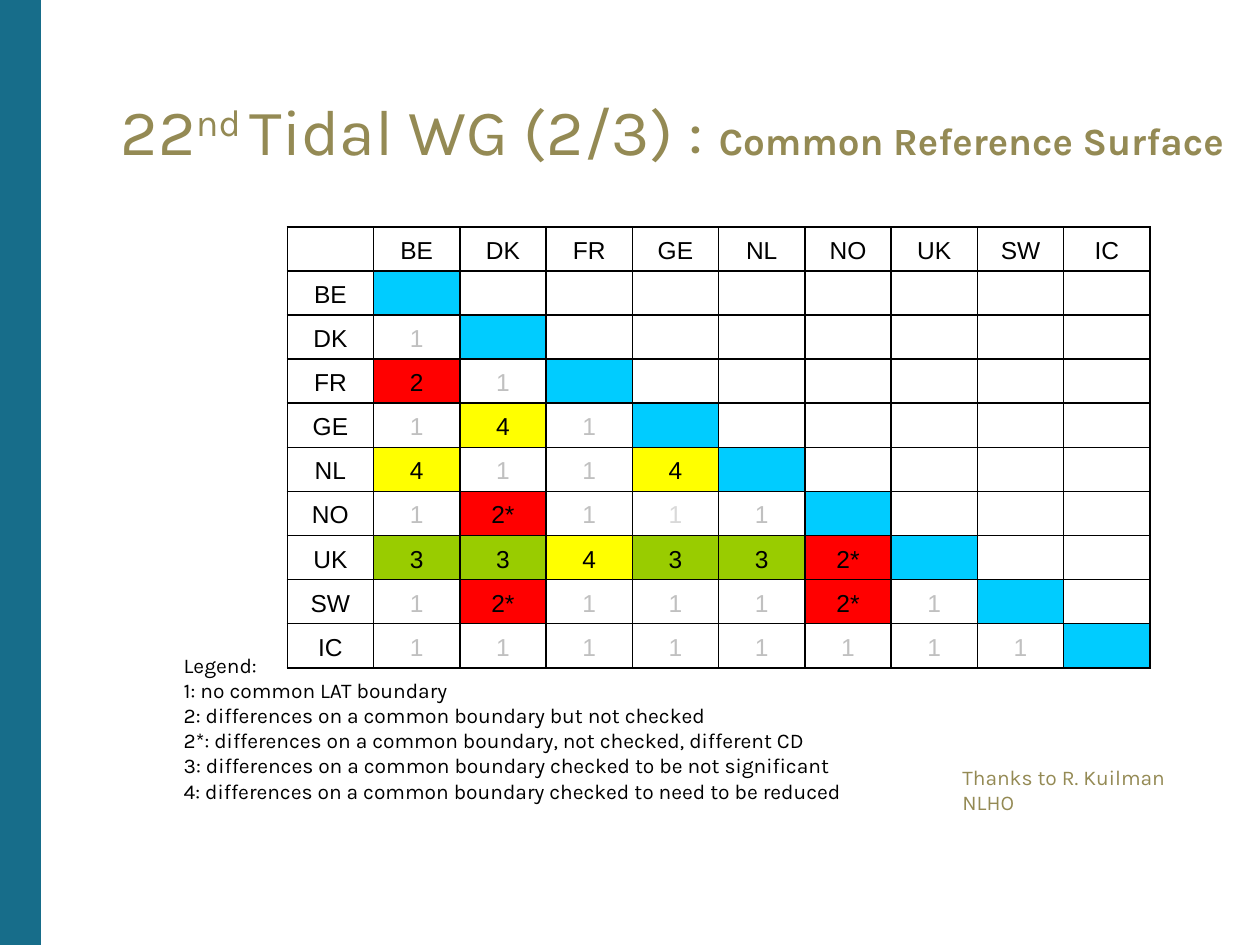
"""Build the Tidal WG slide with its matrix of common reference surface boundaries."""
from dataclasses import dataclass

from lxml import etree
from pptx import Presentation
from pptx.dml.color import RGBColor
from pptx.enum.shapes import MSO_SHAPE
from pptx.enum.text import MSO_ANCHOR, PP_ALIGN
from pptx.oxml.ns import qn
from pptx.util import Inches, Pt

RECTANGLE = MSO_SHAPE.RECTANGLE
TOP, MIDDLE, BOTTOM = MSO_ANCHOR.TOP, MSO_ANCHOR.MIDDLE, MSO_ANCHOR.BOTTOM
CENTER = PP_ALIGN.CENTER

COUNTRIES = ["BE", "DK", "FR", "GE", "NL", "NO", "UK", "SW", "IC"]
COMPARISONS = [
    [],
    ["1"],
    ["2", "1"],
    ["1", "4", "1"],
    ["4", "1", "1", "4"],
    ["1", "2*", "1", "1", "1"],
    ["3", "3", "4", "3", "3", "2*"],
    ["1", "2*", "1", "1", "1", "2*", "1"],
    ["1", "1", "1", "1", "1", "1", "1", "1"],
]
PALEST_CELL = ("NO", "GE")
LEGEND = [
    "Legend:",
    "1: no common LAT boundary",
    "2: differences on a common boundary but not checked",
    "2*: differences on a common boundary, not checked, different CD",
    "3: differences on a common boundary checked to be not significant",
    "4: differences on a common boundary checked to need to be reduced",
]
CREDIT = ["Thanks to R. Kuilman NLHO"]
TITLE = [("22", False, False), ("nd ", True, False),
         ("Tidal WG (2/3) : ", False, False),
         ("Common Reference Surface", False, True)]

WIDTH, HEIGHT = 10, 7.5
BAND_WIDTH = 0.32
TITLE_BOX = (0.96, 0.81, 8.94, 0.75)
TABLE_BOX = (2.28, 1.8, 6.85, 3.5)
LEGEND_BOX = (1.36, 5.12, 6.18, 1.31)
CREDIT_BOX = (7.54, 6.02, 2.2, 0.3)


@dataclass(frozen=True)
class Theme:
    font: str = "Karla"
    table_font: str = "Arial"
    band: str = "176D8A"
    accent: str = "948A54"
    ink: str = "000000"
    muted: str = "C0C0C0"
    palest: str = "D9D9D9"
    diagonal: str = "00CCFF"
    title_size: int = 37
    subtitle_size: int = 22
    title_leading: int = 38
    table_size: int = 14
    body_size: int = 12
    border: int = 1


THEME = Theme()
CODE_FILLS = {"2": "FF0000", "2*": "FF0000", "3": "99CC00", "4": "FFFF00"}


def inches(box):
    return [Inches(length) for length in box]


def add_run(paragraph, text, size, color, font=THEME.font, bold=False):
    run = paragraph.add_run()
    run.text = text
    run.font.name = font
    run.font.size = Pt(size)
    run.font.bold = bold
    run.font.color.rgb = RGBColor.from_string(color)
    return run


def add_text_frame(slide, box, anchor=TOP):
    frame = slide.shapes.add_textbox(*inches(box)).text_frame
    frame.word_wrap = True
    frame.vertical_anchor = anchor
    return frame


def add_band(slide):
    shape = slide.shapes.add_shape(RECTANGLE, *inches((0, 0, BAND_WIDTH, HEIGHT)))
    shape.shadow.inherit = False
    shape.fill.solid()
    shape.fill.fore_color.rgb = RGBColor.from_string(THEME.band)
    shape.line.color.rgb = RGBColor.from_string(THEME.band)
    shape.line.width = Pt(1)


def add_title(slide):
    frame = add_text_frame(slide, TITLE_BOX)
    frame.margin_left = frame.margin_right = frame.margin_top = frame.margin_bottom = 0
    paragraph = frame.paragraphs[0]
    paragraph.line_spacing = Pt(THEME.title_leading)
    for text, raised, bold in TITLE:
        size = THEME.subtitle_size if bold else THEME.title_size
        run = add_run(paragraph, text, size, THEME.accent, bold=bold)
        if raised:
            run.font._element.set("baseline", "30000")


def add_lines(slide, box, lines, color, anchor=TOP):
    frame = add_text_frame(slide, box, anchor)
    for index, line in enumerate(lines):
        paragraph = frame.add_paragraph() if index else frame.paragraphs[0]
        add_run(paragraph, line, THEME.body_size, color)


def add_borders(cell):
    properties = cell._tc.get_or_add_tcPr()
    for side in ("a:lnL", "a:lnR", "a:lnT", "a:lnB"):
        line = etree.SubElement(properties, qn(side), w=str(Pt(THEME.border)))
        fill = etree.SubElement(line, qn("a:solidFill"))
        etree.SubElement(fill, qn("a:srgbClr"), val=THEME.ink)


def style_cell(cell, text, color, fill):
    add_borders(cell)
    cell.vertical_anchor = BOTTOM
    cell.margin_top = 0
    cell.margin_bottom = Inches(0.05 if text else 0)
    if fill:
        cell.fill.solid()
        cell.fill.fore_color.rgb = RGBColor.from_string(fill)
    else:
        cell.fill.background()
    if text:
        paragraph = cell.text_frame.paragraphs[0]
        paragraph.alignment = CENTER
        paragraph.line_spacing = 1.07
        add_run(paragraph, text, THEME.table_size, color, THEME.table_font)


def comparison_color(code, pair):
    if code != "1":
        return THEME.ink
    return THEME.palest if pair == PALEST_CELL else THEME.muted


def add_matrix(slide):
    count = len(COUNTRIES) + 1
    table = slide.shapes.add_table(count, count, *inches(TABLE_BOX)).table
    table.first_row = table.horz_banding = False
    for column in table.columns:
        column.width = Inches(TABLE_BOX[2] / count)
    for row in table.rows:
        row.height = Inches(TABLE_BOX[3] / count)
    style_cell(table.cell(0, 0), "", THEME.ink, None)
    for index, country in enumerate(COUNTRIES):
        style_cell(table.cell(0, index + 1), country, THEME.ink, None)
        style_cell(table.cell(index + 1, 0), country, THEME.ink, None)
        codes = COMPARISONS[index]
        for other, partner in enumerate(COUNTRIES):
            code = codes[other] if other < index else ""
            fill = THEME.diagonal if other == index else CODE_FILLS.get(code)
            color = comparison_color(code, (country, partner))
            style_cell(table.cell(index + 1, other + 1), code, color, fill)


def main():
    presentation = Presentation()
    presentation.slide_width, presentation.slide_height = inches((WIDTH, HEIGHT))
    slide = presentation.slides.add_slide(presentation.slide_layouts[6])
    add_band(slide)
    add_title(slide)
    add_matrix(slide)
    add_lines(slide, LEGEND_BOX, LEGEND, THEME.ink, MIDDLE)
    add_lines(slide, CREDIT_BOX, CREDIT, THEME.accent)
    presentation.save("out.pptx")


if __name__ == "__main__":
    main()
